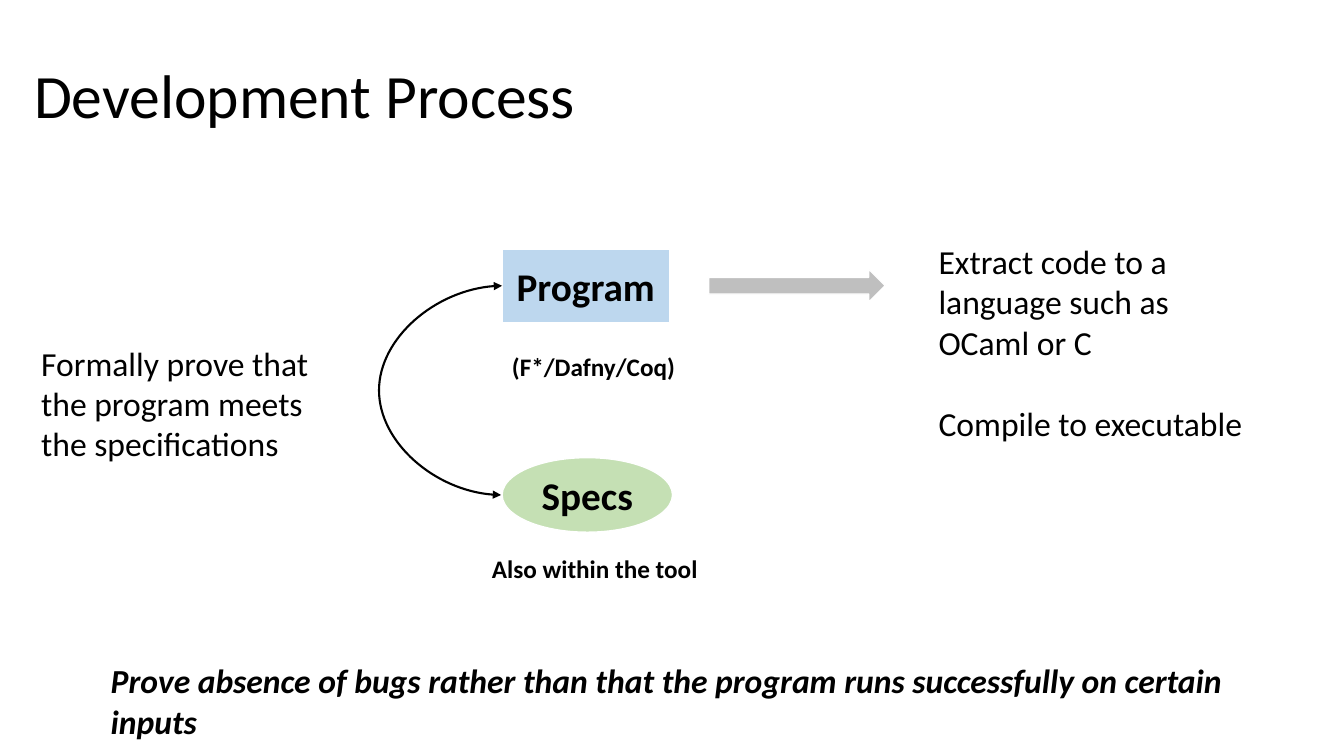
import pptx
import pptx.util
import pptx.dml.color
import pptx.enum.shapes
import pptx.enum.text
import pptx.oxml
import pptx.oxml.ns
import lxml.etree

SHAPE = pptx.enum.shapes.MSO_SHAPE
ANCHOR = pptx.enum.text.MSO_ANCHOR
ALIGN = pptx.enum.text.PP_ALIGN
INCH = pptx.util.Inches

# Content: paragraphs, place (left, top, width, height), font values
TITLE = (["Development Process"], (0.24, 0.25, 11.5, 1.45), {"size": 44})
BODY = {"size": 24}
CAPTION = {"size": 18, "bold": True}
LABEL = {"size": 28, "bold": True}
NOTES = [
    (["(F*/Dafny/Coq)"], (4.98, 3.44, 1.86, 0.4), CAPTION),
    (["Also within the tool"], (4.78, 5.44, 2.25, 0.71), CAPTION),
    (["Formally prove that the program meets the specifications"],
     (0.31, 3.35, 3.06, 1.31), BODY),
    (["Extract code to a language such as OCaml or C", "Compile to executable"],
     (9.21, 2.34, 3.28, 2.12), BODY),
    (["Prove absence of bugs rather than that the program runs successfully on certain inputs"],
     (1, 6.5, 11.94, 0.5), {**BODY, "bold": True, "italic": True}),
]
PROGRAM = (4.98, 2.47, 1.66, 0.73)
SPECS = (4.98, 4.54, 1.69, 0.74)
NODES = [
    (SHAPE.RECTANGLE, ["Program"], PROGRAM, "BDD7EE"),
    (SHAPE.OVAL, ["Specs"], SPECS, "C5E0B4"),
    (SHAPE.RIGHT_ARROW, [], (7.03, 2.67, 1.75, 0.33), "BFBFBF"),
]
BULGE = 1.24      # how far the curve reaches left of the nodes
CURVE_WIDTH = 0.01
PARAGRAPH_GAP = 29.3


def color(value):
    return pptx.dml.color.RGBColor.from_string(value)


def write(shape, lines, font, anchor=ANCHOR.TOP, align=ALIGN.LEFT, spacing=None):
    frame = shape.text_frame
    frame.word_wrap = True
    frame.vertical_anchor = anchor
    for index, line in enumerate(lines):
        para = frame.paragraphs[0] if index == 0 else frame.add_paragraph()
        para.alignment = align
        para.line_spacing = spacing
        if index:
            para.space_before = pptx.util.Pt(PARAGRAPH_GAP)
        span = para.add_run()
        span.text = line
        values = {**font, "name": "Calibri", "size": pptx.util.Pt(font["size"])}
        for name, value in values.items():
            setattr(span.font, name, value)
        span.font.color.rgb = color("000000")


def add_text(page, lines, place, font, **layout):
    box = page.shapes.add_textbox(*map(INCH, place))
    write(box, lines, font, **layout)


def add_node(page, kind, lines, place, fill):
    node = page.shapes.add_shape(kind, *map(INCH, place))
    node.shadow.inherit = False
    node.fill.solid()
    node.fill.fore_color.rgb = color(fill)
    node.line.color.rgb = color("FFFFFF")
    node.line.width = pptx.util.Pt(1)
    write(node, lines, LABEL, anchor=ANCHOR.MIDDLE, align=ALIGN.CENTER)


def add_curve(page, start, end):
    left = start[0]
    start_y, end_y = (top + height / 2 for _, top, _, height in (start, end))
    curve = page.shapes.add_connector(
        pptx.enum.shapes.MSO_CONNECTOR.CURVE,
        *map(INCH, (left, start_y, left - CURVE_WIDTH, end_y)))
    curve.line.color.rgb = color("000000")
    curve.line.width = pptx.util.Pt(1.5)
    qn = pptx.oxml.ns.qn
    # Bend of the curve, as a share of its width
    guides = curve._element.spPr.find(qn("a:prstGeom")).get_or_add_avLst()
    bend = round(BULGE / CURVE_WIDTH * 100000)
    lxml.etree.SubElement(guides, qn("a:gd"), name="adj1", fmla=f"val {bend}")
    # Arrowheads at both ends, no shadow
    outline = curve.line._get_or_add_ln()
    for end_name in ("a:headEnd", "a:tailEnd"):
        lxml.etree.SubElement(outline, qn(end_name), type="triangle")
    lxml.etree.SubElement(curve._element.spPr, qn("a:effectLst"))


def main():
    deck = pptx.Presentation()
    deck.slide_width, deck.slide_height = INCH(13.33), INCH(7.5)
    page = deck.slides.add_slide(deck.slide_layouts[6])
    add_text(page, *TITLE, anchor=ANCHOR.MIDDLE, spacing=0.9)
    for node in NODES:
        add_node(page, *node)
    add_curve(page, PROGRAM, SPECS)
    for note in NOTES:
        add_text(page, *note)
    deck.save("out.pptx")


if __name__ == "__main__":
    main()
